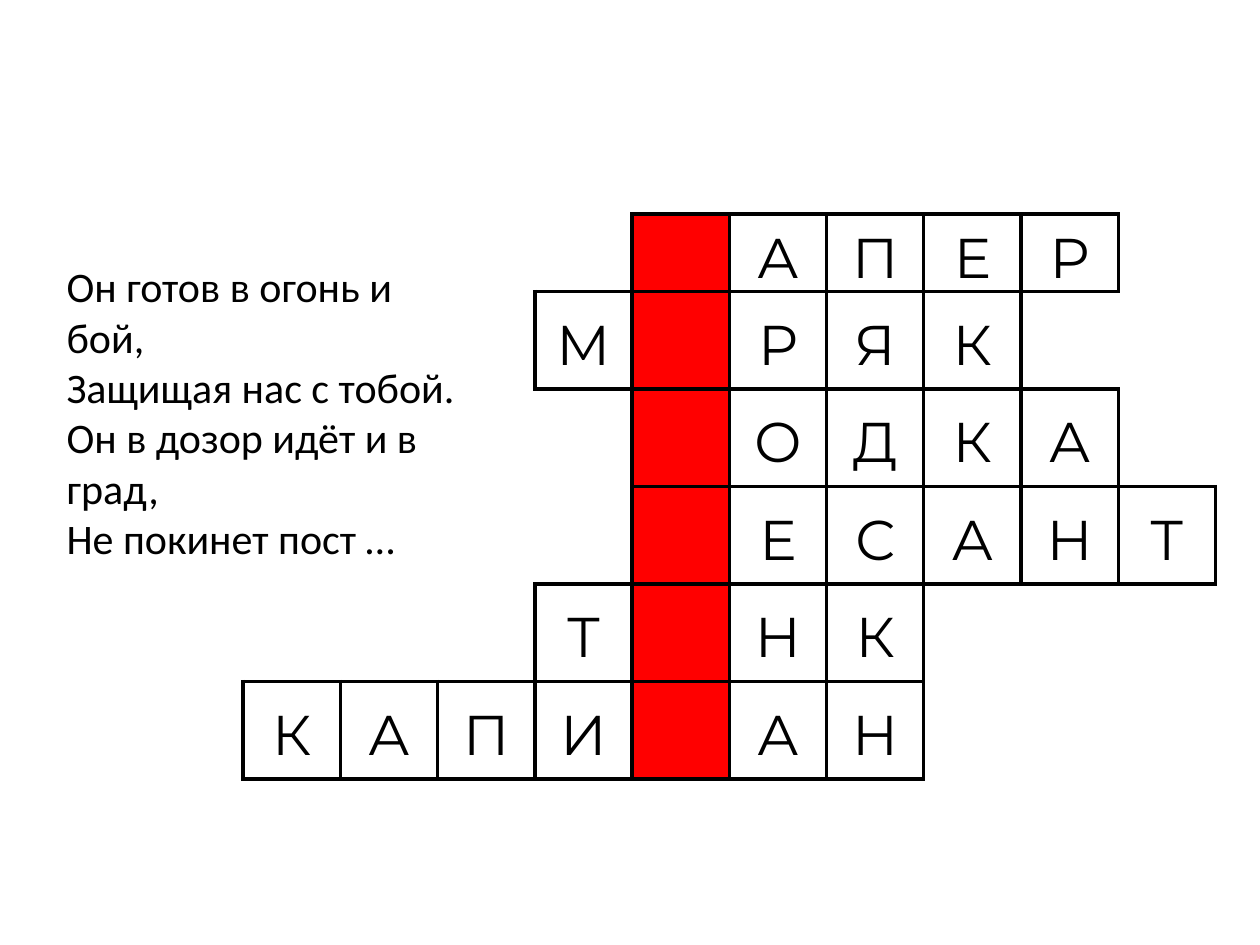
from dataclasses import dataclass

from lxml import etree
from pptx import Presentation
from pptx.dml.color import RGBColor
from pptx.enum import text
from pptx.oxml import ns
from pptx.util import Inches, Pt


@dataclass(frozen=True)
class Theme:
    ink: RGBColor = RGBColor(0, 0, 0)
    key: RGBColor = RGBColor(255, 0, 0)
    riddle_font: str = "Calibri"
    riddle_size: int = 24
    letter_font: str = "Montserrat"
    letter_size: int = 32
    border: float = 2.25


THEME = Theme()
RIDDLE = (
    "Он готов в огонь и бой,\n"
    "Защищая нас с тобой.\n"
    "Он в дозор идёт и в град,\n"
    "Не покинет пост …"
)
KEY = "#"
EMPTY = "."
WORDS = [
    "....#АПЕР.",
    "...М#РЯК..",
    "....#ОДКА.",
    "....#ЕСАНТ",
    "...Т#НК...",
    "КАПИ#АН...",
]
SIDES = {"lnL": (0, -1), "lnR": (0, 1), "lnT": (-1, 0), "lnB": (1, 0)}


def style_font(font, name, size):
    font.name = name
    font.size = Pt(size)
    font.color.rgb = THEME.ink


def add_riddle(page, left, top, width, height):
    box = page.shapes.add_textbox(left, top, width, height)
    frame = box.text_frame
    frame.word_wrap = True
    frame.auto_size = text.MSO_AUTO_SIZE.SHAPE_TO_FIT_TEXT
    para = frame.paragraphs[0]
    para.text = RIDDLE
    for span in para.runs:
        style_font(span.font, THEME.riddle_font, THEME.riddle_size)


def is_used(row, column):
    inside = 0 <= row < len(WORDS) and 0 <= column < len(WORDS[0])
    return inside and WORDS[row][column] != EMPTY


def set_borders(cell, row, column):
    """Draw each side that touches a used square, and clear the others."""
    properties = cell._tc.get_or_add_tcPr()
    for side, (down, across) in SIDES.items():
        line = etree.SubElement(properties, ns.qn(f"a:{side}"))
        if is_used(row, column) or is_used(row + down, column + across):
            line.set("w", str(Pt(THEME.border)))
            fill = etree.SubElement(line, ns.qn("a:solidFill"))
            etree.SubElement(fill, ns.qn("a:srgbClr"), val=str(THEME.ink))
        else:
            etree.SubElement(line, ns.qn("a:noFill"))


def fill_square(cell, mark):
    cell.margin_left = cell.margin_right = Inches(0.07)
    cell.margin_top = cell.margin_bottom = 0
    cell.vertical_anchor = text.MSO_ANCHOR.MIDDLE
    if mark == KEY:
        cell.fill.solid()
        cell.fill.fore_color.rgb = THEME.key
        return
    cell.fill.background()
    if mark != EMPTY:
        para = cell.text_frame.paragraphs[0]
        para.text = mark
        para.alignment = text.PP_ALIGN.CENTER
        para.line_spacing = 1.15
        style_font(para.runs[0].font, THEME.letter_font, THEME.letter_size)


def add_crossword(page, left, top, width, height):
    first_height = Inches(0.58)
    table = page.shapes.add_table(
        len(WORDS), len(WORDS[0]), left, top, width, height
    ).table
    table.first_row = table.horz_banding = False
    for row, word in enumerate(WORDS):
        table.rows[row].height = (
            (height - first_height) // (len(WORDS) - 1) if row else first_height
        )
        for column, mark in enumerate(word):
            cell = table.cell(row, column)
            set_borders(cell, row, column)
            fill_square(cell, mark)


def main():
    deck = Presentation()
    deck.slide_width, deck.slide_height = Inches(10), Inches(7.5)
    page = deck.slides.add_slide(deck.slide_layouts[6])
    add_riddle(page, Inches(0.43), Inches(2.02), Inches(3.29), Inches(2.52))
    add_crossword(page, Inches(1.93), Inches(1.7), Inches(7.72), Inches(4.45))
    deck.save("out.pptx")


if __name__ == "__main__":
    main()
